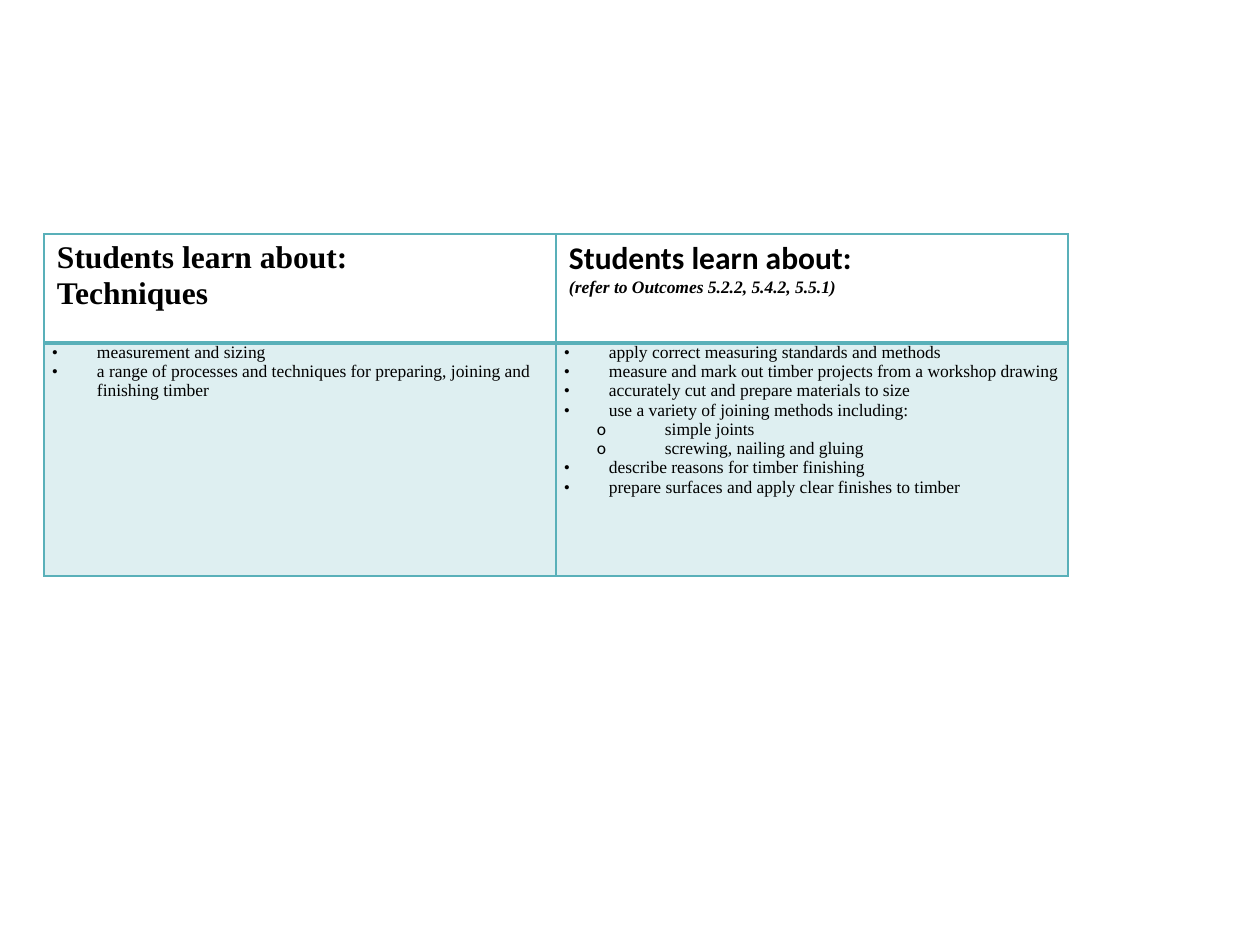
from dataclasses import dataclass

from lxml.etree import SubElement
from pptx import Presentation
from pptx.dml.color import RGBColor
from pptx.oxml.ns import qn
from pptx.table import _Cell
from pptx.util import Emu, Pt

PIXELS_PER_INCH = 126
TEAL = "59B0B9"
PALE_TEAL = "DEEFF1"
BLACK = "000000"
SERIF = "Times New Roman"
SANS = "Calibri"


@dataclass(frozen=True)
class Line:
    text: str
    size: int = 10
    font: str = SERIF
    bold: bool = False
    italic: bool = False
    space_before: int = 0
    line_spacing: int = 0
    bullet: str = ""
    margin: int = 0
    hanging: int = 0


@dataclass(frozen=True)
class CellStyle:
    side_inset: int
    top_inset: int
    bottom_border: int
    fill: str = ""


HEADER_STYLE = CellStyle(side_inset=13, top_inset=6, bottom_border=2)
BODY_STYLE = CellStyle(side_inset=8, top_inset=0, bottom_border=1, fill=PALE_TEAL)


def px(length: int) -> Emu:
    return Emu(round(length * 914400 / PIXELS_PER_INCH))


def color(value: str) -> RGBColor:
    return RGBColor.from_string(value)


def heading(text: str, font: str = SERIF, space_before: int = 0) -> Line:
    return Line(text, size=18, font=font, bold=True, space_before=space_before)


def item(text: str) -> Line:
    return Line(text, line_spacing=11, bullet="•", margin=45, hanging=45)


def subitem(text: str) -> Line:
    return Line(text, line_spacing=11, bullet="o", margin=101, hanging=68)


ROWS = [
    (
        HEADER_STYLE,
        [
            [heading("Students learn about:"), heading("Techniques", space_before=1)],
            [
                heading("Students learn about:", font=SANS),
                Line("(refer to Outcomes 5.2.2, 5.4.2, 5.5.1)", bold=True, italic=True),
            ],
        ],
    ),
    (
        BODY_STYLE,
        [
            [
                item("measurement and sizing"),
                item(
                    "a range of processes and techniques for preparing, "
                    "joining and finishing timber"
                ),
            ],
            [
                item("apply correct measuring standards and methods"),
                item("measure and mark out timber projects from a workshop drawing"),
                item("accurately cut and prepare materials to size"),
                item("use a variety of joining methods including:"),
                subitem("simple joints"),
                subitem("screwing, nailing and gluing"),
                item("describe reasons for timber finishing"),
                item("prepare surfaces and apply clear finishes to timber"),
            ],
        ],
    ),
]


def add_border(cell: _Cell, side: str, width: int) -> None:
    properties = cell._tc.get_or_add_tcPr()
    border = SubElement(properties, qn(f"a:ln{side}"), w=str(Pt(width)))
    fill = SubElement(border, qn("a:solidFill"))
    SubElement(fill, qn("a:srgbClr"), val=TEAL)


def style_cell(cell: _Cell, style: CellStyle, top_border: int) -> None:
    cell.margin_left = cell.margin_right = px(style.side_inset)
    cell.margin_top = cell.margin_bottom = px(style.top_inset)
    widths = {"L": 1, "R": 1, "T": top_border, "B": style.bottom_border}
    for side, width in widths.items():
        add_border(cell, side, width)
    if style.fill:
        cell.fill.solid()
        cell.fill.fore_color.rgb = color(style.fill)
    else:
        cell.fill.background()


def write_lines(cell: _Cell, lines: list[Line]) -> None:
    text_frame = cell.text_frame
    text_frame.text = "\n".join(line.text for line in lines)
    for paragraph, line in zip(text_frame.paragraphs, lines):
        if line.bullet:
            properties = paragraph._p.get_or_add_pPr()
            properties.set("marL", str(px(line.margin)))
            properties.set("indent", str(-px(line.hanging)))
            bullet_font = SERIF if line.bullet == "•" else SANS
            SubElement(properties, qn("a:buFont"), typeface=bullet_font)
            SubElement(properties, qn("a:buChar"), char=line.bullet)
        if line.line_spacing:
            paragraph.line_spacing = Pt(line.line_spacing)
        if line.space_before:
            paragraph.space_before = Pt(line.space_before)
        for run in paragraph.runs:
            run.font.size = Pt(line.size)
            run.font.name = line.font
            run.font.bold = line.bold
            run.font.italic = line.italic
            run.font.color.rgb = color(BLACK)


def main() -> None:
    presentation = Presentation()
    presentation.slide_width = px(1260)
    presentation.slide_height = px(945)
    slide = presentation.slides.add_slide(presentation.slide_layouts[6])
    frame = slide.shapes.add_table(2, 2, px(44), px(234), px(1024), px(342))
    table = frame.table
    for row, height in zip(table.rows, (109, 233)):
        row.height = px(height)
    top_border = 1
    for row, (style, contents) in zip(table.rows, ROWS):
        for cell, lines in zip(row.cells, contents):
            style_cell(cell, style, top_border)
            write_lines(cell, lines)
        top_border = style.bottom_border
    presentation.save("out.pptx")


if __name__ == "__main__":
    main()
